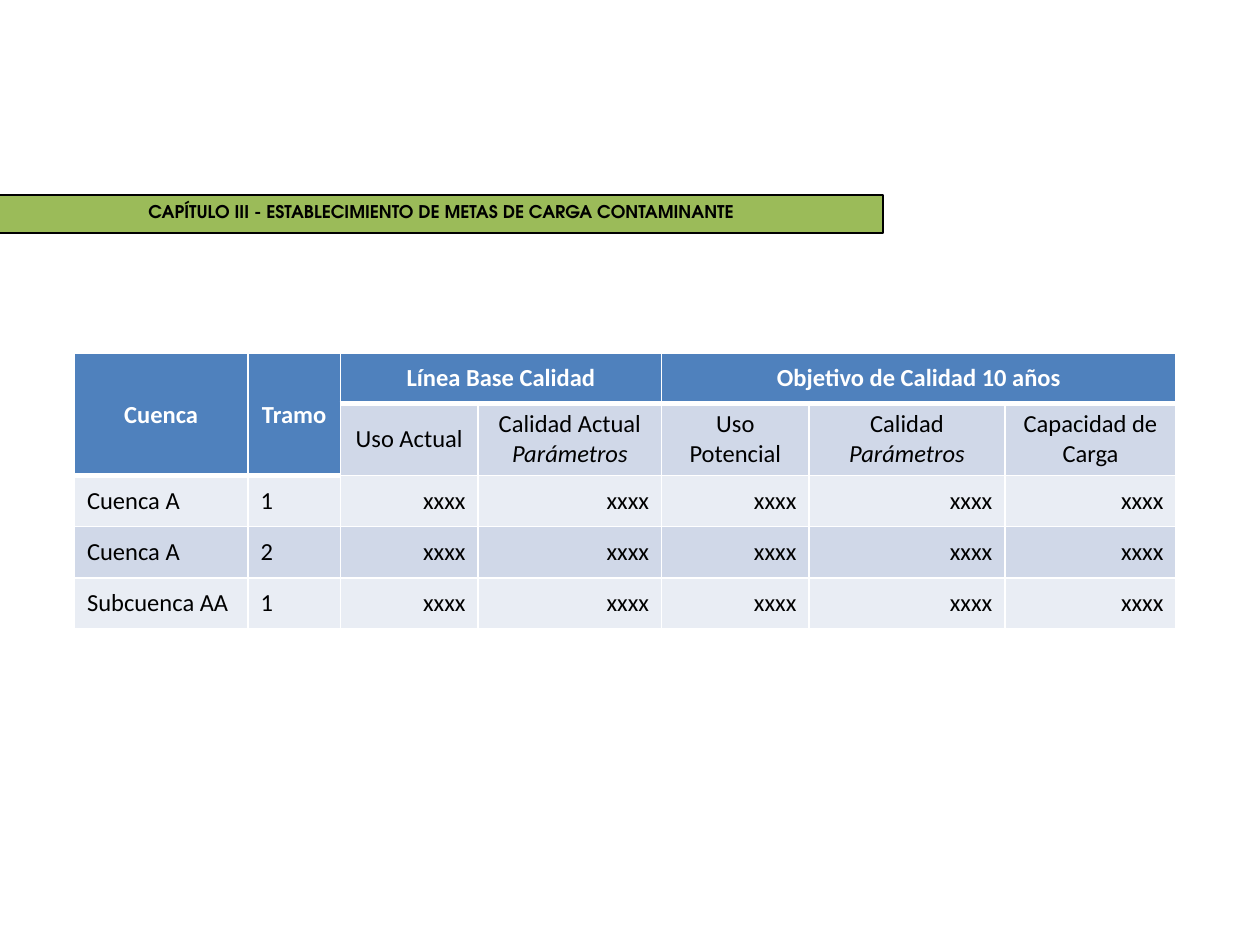
from lxml.etree import SubElement
from pptx import Presentation
from pptx.dml.color import RGBColor
from pptx.enum.text import MSO_ANCHOR, MSO_AUTO_SIZE, PP_ALIGN
from pptx.oxml.ns import qn
from pptx.util import Cm, Pt

TITLE = "CAPÍTULO III - ESTABLECIMIENTO DE METAS DE CARGA CONTAMINANTE"
VALUES = ["xxxx"] * 5
ROWS = [
    ["Cuenca", "Tramo", "Línea Base Calidad", "", "Objetivo de Calidad 10 años", "", ""],
    ["", "", "Uso Actual", "Calidad Actual\nParámetros", "Uso Potencial",
     "Calidad\nParámetros", "Capacidad de Carga"],
    ["Cuenca A", "1", *VALUES],
    ["Cuenca A", "2", *VALUES],
    ["Subcuenca AA", "1", *VALUES],
]
MERGES = [((0, 0), (1, 0)), ((0, 1), (1, 1)), ((0, 2), (0, 3)), ((0, 4), (0, 6))]
WIDTHS = [3.5, 1.86, 2.78, 3.7, 2.97, 3.95, 3.45]
HEIGHTS = [1, 1.42, 1.03, 1.03, 1.03]
BLUE, BANDS = "4F81BD", ["E9EDF4", "D0D8E8"]
WHITE, BLACK, GREEN = "FFFFFF", "000000", "9BBB59"


def paint(fill, color):
    fill.solid()
    fill.fore_color.rgb = RGBColor.from_string(color)


def set_font(par, name, size, color, bold):
    font = par.font
    font.name, font.size, font.bold = name, Pt(size), bold
    font.color.rgb = RGBColor.from_string(color)


def add_borders(cell, top, bottom):
    """Draw white borders; must run before the cell is filled."""
    props = cell._tc.get_or_add_tcPr()
    for side, width in (("L", 1), ("R", 1), ("T", top), ("B", bottom)):
        line = SubElement(props, qn(f"a:ln{side}"), w=str(Pt(width)))
        solid = SubElement(line, qn("a:solidFill"))
        SubElement(solid, qn("a:srgbClr"), val=WHITE)


def add_title(slide):
    title = slide.shapes.title
    title.left, title.top = Cm(-0.03), Cm(3.93)
    title.width, title.height = Cm(17.83), Cm(0.77)
    paint(title.fill, GREEN)
    paint(title.line.fill, BLACK)
    title.line.width = Pt(0.75)
    frame = title.text_frame
    frame.text = TITLE
    frame.auto_size = MSO_AUTO_SIZE.NONE
    frame.vertical_anchor = MSO_ANCHOR.TOP
    par = frame.paragraphs[0]
    par.alignment = PP_ALIGN.CENTER
    set_font(par, "TeX Gyre Adventor", 10, BLACK, True)


def fill_cell(cell, text, row, col):
    head = row == 0 or (row == 1 and col < 2)
    last = 1 if col < 2 else 0
    add_borders(cell, 3 if row == last + 1 else 1, 3 if row == last else 1)
    paint(cell.fill, BLUE if head else BANDS[row % 2])
    cell.vertical_anchor = MSO_ANCHOR.MIDDLE
    if not text:
        return
    cell.text = text
    for par in cell.text_frame.paragraphs:
        if row < 2:
            par.alignment = PP_ALIGN.CENTER
        elif col > 1:
            par.alignment = PP_ALIGN.RIGHT
        set_font(par, "Calibri", 14, WHITE if head else BLACK, head)
        par.font.italic = par.text == "Parámetros"


def add_table(slide):
    table = slide.shapes.add_table(
        len(ROWS), len(WIDTHS), Cm(1.5), Cm(7.13),
        Cm(sum(WIDTHS)), Cm(sum(HEIGHTS))).table
    for column, width in zip(table.columns, WIDTHS):
        column.width = Cm(width)
    for line, height in zip(table.rows, HEIGHTS):
        line.height = Cm(height)
    for start, end in MERGES:
        table.cell(*start).merge(table.cell(*end))
    for row, texts in enumerate(ROWS):
        for col, text in enumerate(texts):
            fill_cell(table.cell(row, col), text, row, col)


def main():
    deck = Presentation()
    deck.slide_width, deck.slide_height = Cm(25.4), Cm(19.05)
    slide = deck.slides.add_slide(deck.slide_layouts[5])
    add_table(slide)
    add_title(slide)
    deck.save("out.pptx")


if __name__ == "__main__":
    main()
